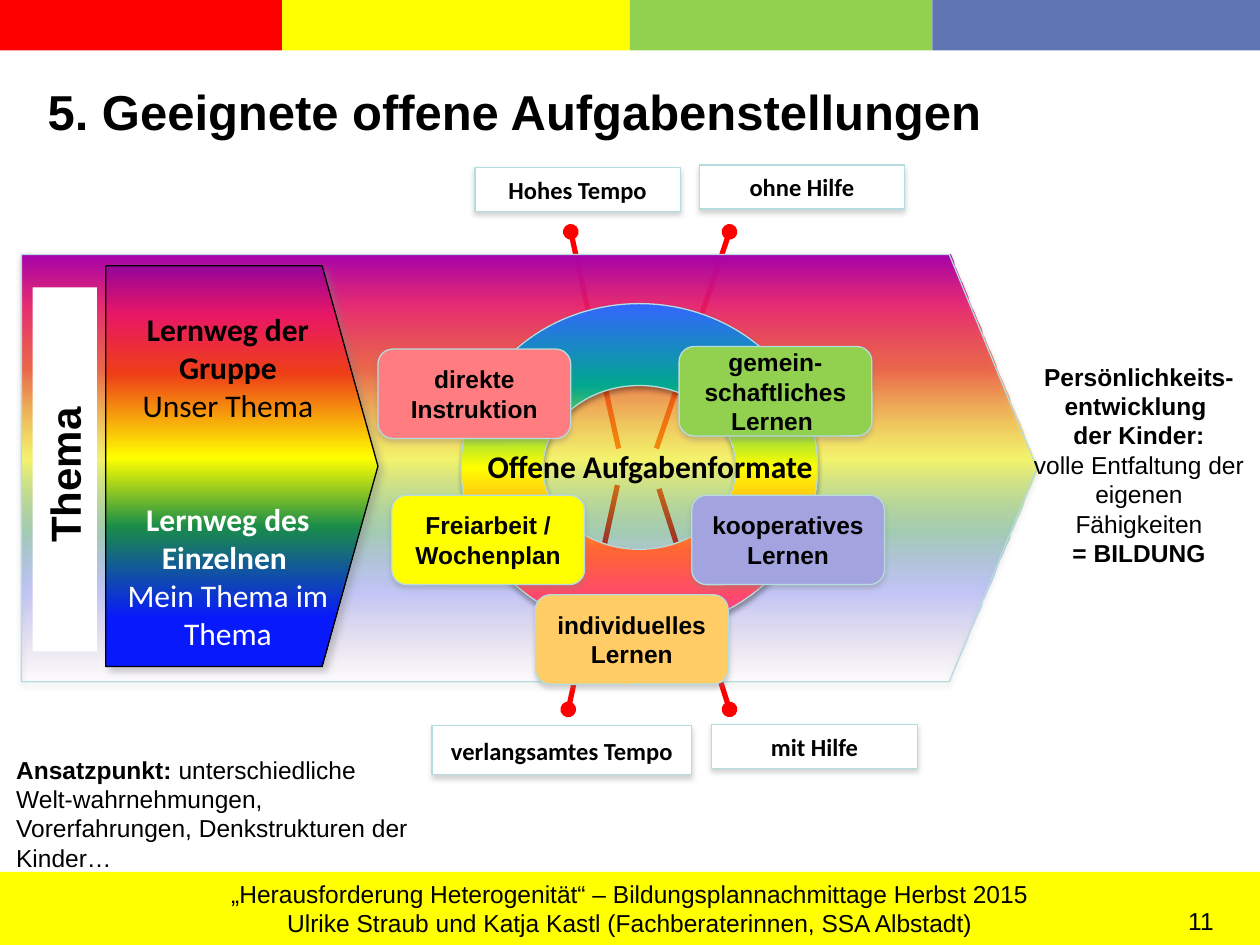
from lxml import etree
from pptx import Presentation
from pptx.dml.color import RGBColor
from pptx.enum.shapes import MSO_CONNECTOR, MSO_SHAPE
from pptx.enum.text import MSO_ANCHOR, PP_ALIGN
from pptx.oxml.ns import qn
from pptx.util import Inches, Pt

RECT, ROUNDED = MSO_SHAPE.RECTANGLE, MSO_SHAPE.ROUNDED_RECTANGLE
ARROW, RING = MSO_SHAPE.PENTAGON, MSO_SHAPE.DONUT
TOP, MIDDLE = MSO_ANCHOR.TOP, MSO_ANCHOR.MIDDLE
LEFT, CENTER = PP_ALIGN.LEFT, PP_ALIGN.CENTER
STRAIGHT = MSO_CONNECTOR.STRAIGHT

WIDTH, HEIGHT = Inches(10), Inches(7.5)
COLUMNS, ROWS = 100, 75
PALE_LINE = "B6DCDF"
SOFT_SHADOW = ("808080", 35, 3.1, 1.8, 90)


def across(columns):
    return round(WIDTH * columns / COLUMNS)


def down(rows):
    return round(HEIGHT * rows / ROWS)


def place(left, top, width, height):
    return across(left), down(top), across(width), down(height)


def color(hex_code):
    return RGBColor.from_string(hex_code)


def add_color(parent, hex_code, opacity=100):
    node = etree.SubElement(parent, qn("a:srgbClr"), val=hex_code)
    if opacity < 100:
        etree.SubElement(node, qn("a:alpha"), val=str(opacity * 1000))


def set_gradient(shape, stops):
    """Fill from top to bottom; a stop is (percent, colour[, opacity])."""
    shape.fill.gradient()
    gradient = shape._element.spPr.find(qn("a:gradFill"))
    for child in list(gradient):
        gradient.remove(child)
    stop_list = etree.SubElement(gradient, qn("a:gsLst"))
    for percent, *paint in stops:
        stop = etree.SubElement(stop_list, qn("a:gs"), pos=str(percent * 1000))
        add_color(stop, *paint)
    etree.SubElement(gradient, qn("a:lin"), ang="5400000", scaled="0")


def set_shadow(shape, hex_code, opacity, blur, distance, angle):
    effects = shape._element.spPr.find(qn("a:effectLst"))
    shadow = etree.SubElement(
        effects, qn("a:outerShdw"), blurRad=str(Pt(blur)), dist=str(Pt(distance)),
        dir=str(angle * 60000), algn="tl", rotWithShape="0")
    add_color(shadow, hex_code, opacity)


def write(shape, *paragraphs, size=14, font="Arial", bold=True, ink="000000",
          align=CENTER, anchor=MIDDLE, wrap=True, insets=(0.1, 0.05, 0.1, 0.05),
          gaps=()):
    """A paragraph is a string or a list of (text, font overrides);
    gaps gives the space before a paragraph by its index, in points."""
    frame = shape.text_frame
    frame.word_wrap, frame.vertical_anchor = wrap, anchor
    (frame.margin_left, frame.margin_top,
     frame.margin_right, frame.margin_bottom) = map(Inches, insets)
    for index, content in enumerate(paragraphs):
        para = frame.paragraphs[0] if index == 0 else frame.add_paragraph()
        para.alignment = align
        if index in gaps:
            para.space_before = Pt(gaps[index])
        spans = [(content, {})] if isinstance(content, str) else content
        for text, changes in spans:
            for number, line in enumerate(text.split("\n")):
                if number:
                    para.add_line_break()
                if line:
                    span = para.add_run()
                    span.text = line
                    span.font.name, span.font.size = font, Pt(size)
                    span.font.bold = changes.get("bold", bold)
                    span.font.color.rgb = color(changes.get("ink", ink))


def add_box(page, kind, area, fill, line=None, shadow=None, adjust=None):
    box = page.shapes.add_shape(kind, *place(*area))
    box.shadow.inherit = False
    if adjust is not None:
        box.adjustments[0] = adjust
    if isinstance(fill, str):
        box.fill.solid()
        box.fill.fore_color.rgb = color(fill)
    else:
        set_gradient(box, fill)
    if line:
        box.line.color.rgb = color(line)
        box.line.width = Pt(0.75)
    else:
        box.line.fill.background()
    if shadow:
        set_shadow(box, *shadow)
    return box


def add_text(page, area, *paragraphs, **style):
    write(page.shapes.add_textbox(*place(*area)), *paragraphs, **style)


def add_pin(page, start, end):
    """Red line with a round head at its start."""
    pin = page.shapes.add_connector(
        STRAIGHT, across(start[0]), down(start[1]), across(end[0]), down(end[1]))
    pin.line.color.rgb = color("FF0000")
    pin.line.width = Pt(3)
    etree.SubElement(pin.line._get_or_add_ln(), qn("a:headEnd"), type="oval")
    etree.SubElement(pin._element.spPr, qn("a:effectLst"))


def add_method(page, left, top, fill, text, side=0.1):
    box = add_box(page, ROUNDED, (left, top, 15.3, 7.1), fill,
                  PALE_LINE, SOFT_SHADOW, 0.167)
    write(box, text, insets=(side, 0.05, side, 0.05))


def add_label(page, left, top, text, width=16.3, height=3.5):
    box = add_box(page, RECT, (left, top, width, height), "FFFFFF",
                  PALE_LINE, SOFT_SHADOW)
    write(box, text, font="Calibri")


def add_frame(page):
    footer = add_box(page, RECT, (0, 69.2, 100, 5.8), "FFFF00")
    write(footer, "„Herausforderung Heterogenität“ – Bildungsplannachmittage Herbst 2015",
          "Ulrike Straub und Katja Kastl (Fachberaterinnen, SSA Albstadt)",
          bold=False, wrap=False)
    add_text(page, (94.3, 71.4, 5.5, 3.4), "11", bold=False, align=LEFT,
             anchor=TOP, insets=(0, 0.05, 0, 0.05))
    edges = (0, 22.4, 50, 74, 100)
    for left, right, fill in zip(edges, edges[1:],
                                 ("FF0000", "FFFF00", "92D050", "6076B4")):
        add_box(page, RECT, (left, 0, right - left, 4), fill)
    add_text(page, (2.8, 6, 93.7, 5.7), "5. Geeignete offene Aufgabenstellungen",
             size=28, align=LEFT, anchor=TOP)


def add_learning_path(page):
    # Pins lie behind the translucent arrow
    for start, end in (((45.3, 18.4), (49.1, 35.6)), ((57.9, 18.4), (52.1, 35.6)),
                       ((57.9, 56.3), (52.3, 38.8)), ((45.1, 56.3), (49, 38.5))):
        add_pin(page, start, end)
    add_box(page, ARROW, (1.7, 20.2, 80.6, 33.9),
            [(0, "A603AB"), (12, "E81766", 88), (27, "EE3F17", 73),
             (48, "FFFF00", 52), (65, "1A8D48", 35), (79, "0819FB", 21),
             (100, "5D0260", 0)], PALE_LINE, SOFT_SHADOW, 0.205)
    add_box(page, RING, (36.6, 24.1, 28.3, 26),
            [(0, "3366FF"), (25, "01A78F"), (50, "FFFF00"), (75, "FF6633"),
             (100, "FF3399")], PALE_LINE, ("000000", 35, 3.1, 1.8, 90), 0.25)

    # Topic strip and the inner arrow
    topic = add_box(page, RECT, (-9.3, 34.7, 28.9, 5.1), "FFFFFF")
    topic.rotation = 270
    write(topic, "Thema ", size=24, anchor=TOP)
    paths = add_box(page, ARROW, (8.4, 21.1, 21.6, 31.8),
                    [(0, "95039A"), (12, "E81766"), (27, "EE3F17"), (48, "FFFF00"),
                     (65, "1A8D48"), (88, "0819FB"), (100, "0819FB")],
                    "000000", ("808080", 40, 4, 3, 45), 0.205)
    white = {"ink": "FFFFFF"}
    write(paths, [("Lernweg der Gruppe\n", {}), ("Unser Thema", {"bold": False})],
          [("Lernweg des Einzelnen ", white)],
          [("Mein Thema im Thema", {**white, "bold": False})],
          size=18, font="Calibri", anchor=TOP,
          insets=(0.1, 0.35, 0.1, 0.05), gaps={1: 44})


def add_methods(page):
    add_method(page, 30, 27.7, "FF7C80", "direkte Instruktion")
    add_method(page, 42.5, 47.2, "FFCC66", "individuelles Lernen")
    add_method(page, 54.9, 39.3, "A3A3E0", "kooperatives Lernen", side=0.04)
    add_method(page, 53.9, 27.5, "92D050", "gemein-\nschaftliches Lernen ", side=0.04)
    add_method(page, 31.1, 39.3, "FFFF00", "Freiarbeit /\nWochenplan")
    add_text(page, (36.4, 35.6, 30.4, 2.8), "Offene Aufgabenformate",
             size=18, font="Calibri")


def add_surroundings(page):
    add_label(page, 37.7, 13.3, "Hohes Tempo")
    add_label(page, 55.5, 13.1, "ohne Hilfe")
    add_label(page, 34.3, 57.6, "verlangsamtes Tempo", width=20.6, height=3.9)
    add_label(page, 56.5, 57.5, "mit Hilfe")
    add_text(page, (0.3, 59.4, 34, 8.1),
             [("Ansatzpunkt: ", {}),
              ("unterschiedliche Welt-wahrnehmungen, Vorerfahrungen, "
               "Denkstrukturen der Kinder…", {"bold": False})],
             align=LEFT, anchor=TOP)
    add_text(page, (80.9, 28.2, 19, 17.5),
             "Persönlichkeits- entwicklung \nder Kinder:",
             [("volle Entfaltung der eigenen Fähigkeiten", {"bold": False})],
             "= BILDUNG", anchor=TOP)


def main():
    deck = Presentation()
    deck.slide_width, deck.slide_height = WIDTH, HEIGHT
    page = deck.slides.add_slide(deck.slide_layouts[6])
    add_frame(page)
    add_learning_path(page)
    add_methods(page)
    add_surroundings(page)
    deck.save("out.pptx")


if __name__ == "__main__":
    main()
